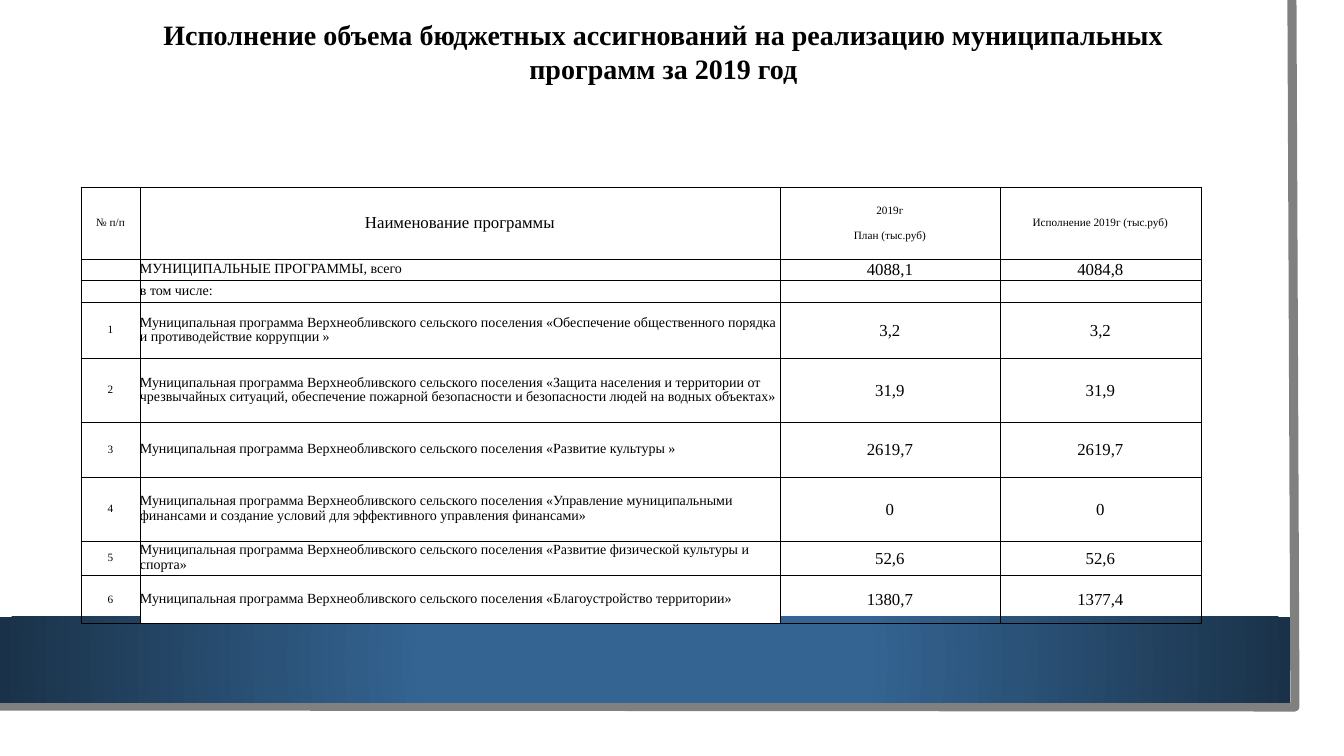
import pptx
import pptx.util
import pptx.dml.color
import pptx.enum.dml
import pptx.enum.shapes
import pptx.enum.text
import pptx.oxml.ns
from lxml import etree

BLACK = pptx.dml.color.RGBColor(0x00, 0x00, 0x00)
WHITE = pptx.dml.color.RGBColor(0xFF, 0xFF, 0xFF)
GREY = pptx.dml.color.RGBColor(0x80, 0x80, 0x80)
BLUE = pptx.dml.color.RGBColor(0x34, 0x64, 0x92)
NAVY = pptx.dml.color.RGBColor(0x1A, 0x32, 0x49)
FONT = "Times New Roman"
LEFT = pptx.enum.text.PP_ALIGN.LEFT
CENTER = pptx.enum.text.PP_ALIGN.CENTER
MIDDLE = pptx.enum.text.MSO_ANCHOR.MIDDLE

TITLE = [
    "Исполнение объема бюджетных ассигнований на реализацию муниципальных",
    "программ за 2019 год",
]
HEADER = ["№ п/п", "Наименование программы", "2019г\nПлан (тыс.руб)", "Исполнение 2019г (тыс.руб)"]
TOTALS = [
    ["", "МУНИЦИПАЛЬНЫЕ ПРОГРАММЫ, всего", "4088,1", "4084,8"],
    ["", "в том числе:", "", ""],
]
PROGRAM_PREFIX = "Муниципальная программа Верхнеобливского сельского поселения "
PROGRAMS = [
    ("«Обеспечение общественного порядка и противодействие коррупции »", "3,2", "3,2"),
    ("«Защита населения и территории от чрезвычайных ситуаций, обеспечение пожарной "
     "безопасности и безопасности людей на водных объектах»", "31,9", "31,9"),
    ("«Развитие культуры »", "2619,7", "2619,7"),
    ("«Управление муниципальными финансами и создание условий для эффективного "
     "управления финансами»", "0", "0"),
    ("«Развитие физической культуры и спорта»", "52,6", "52,6"),
    ("«Благоустройство территории»", "1380,7", "1377,4"),
]
COLUMN_WIDTHS = [59, 640, 220, 201]
ROW_HEIGHTS = [72, 21, 22, 56, 64, 55, 64, 34, 49]
HEADER_SIZES = [8, 12, 8, 8]
BODY_SIZES = [8, 10, 12, 12]
NAME_COLUMN = 1
WHITE_ROWS = (3, 8)
FRAME_POINTS = [(1292, 0), (1295, 707), (-3, 706)]


def px(length):
    return round(length * 914400 / 100.8)


def set_attributes(target, values):
    for name, value in values.items():
        setattr(target, name, value)


def add_element(parent, tag, **attributes):
    return etree.SubElement(parent, pptx.oxml.ns.qn(tag), **attributes)


def write_lines(frame, lines, size, bold=False, align=CENTER, gap=0, spacing=1.0):
    for index, line in enumerate(lines):
        para = frame.add_paragraph() if index else frame.paragraphs[0]
        set_attributes(para, {"alignment": align, "line_spacing": spacing})
        if index and gap:
            para.space_before = pptx.util.Pt(gap)
        if line:
            span = para.add_run()
            span.text = line
            set_attributes(span.font, {"name": FONT, "size": pptx.util.Pt(size), "bold": bold})
            span.font.color.rgb = BLACK
        else:
            add_element(para._p, "a:endParaRPr", sz=str(size * 100))


def add_borders(cell):
    properties = cell._tc.get_or_add_tcPr()
    for side in ("a:lnL", "a:lnR", "a:lnT", "a:lnB"):
        line = add_element(properties, side, w=str(pptx.util.Pt(0.5)))
        add_element(add_element(line, "a:solidFill"), "a:srgbClr", val=str(BLACK))


def add_rectangle(page, left, top, width, height):
    shape = page.shapes.add_shape(
        pptx.enum.shapes.MSO_SHAPE.RECTANGLE, px(left), px(top), px(width), px(height))
    shape.shadow.inherit = False
    shape.line.fill.background()
    return shape


def add_background(page):
    sheet = add_rectangle(page, 0, 0, 1320, 733)
    sheet.fill.solid()
    sheet.fill.fore_color.rgb = WHITE

    start, *rest = [(px(x), px(y)) for x, y in FRAME_POINTS]
    builder = page.shapes.build_freeform(*start)
    builder.add_line_segments(rest, close=False)
    frame_line = builder.convert_to_shape()
    frame_line.shadow.inherit = False
    frame_line.fill.background()
    frame_line.line.color.rgb = GREY
    frame_line.line.width = pptx.util.Pt(6.5)

    band = add_rectangle(page, 0, 617, 1290, 86)
    band.fill.gradient()
    for stop, position, color in zip(band.fill.gradient_stops, (0.34, 1), (BLUE, NAVY)):
        stop.position = position
        stop.color.rgb = color
    gradient = band._element.spPr.find(pptx.oxml.ns.qn("a:gradFill"))
    gradient.remove(gradient.find(pptx.oxml.ns.qn("a:lin")))
    circle = add_element(gradient, "a:path", path="circle")
    add_element(circle, "a:fillToRect", l="50000", t="50000", r="50000", b="50000")


def add_budget_table(page):
    rows = [HEADER, *TOTALS]
    for number, (name, plan, actual) in enumerate(PROGRAMS, 1):
        rows.append([str(number), PROGRAM_PREFIX + name, plan, actual])
    table = page.shapes.add_table(
        len(rows), len(COLUMN_WIDTHS), px(81), px(187),
        px(sum(COLUMN_WIDTHS)), px(sum(ROW_HEIGHTS))).table
    set_attributes(table, {"first_row": False, "horz_banding": False})
    for column, width in zip(table.columns, COLUMN_WIDTHS):
        column.width = px(width)
    for row, height in zip(table.rows, ROW_HEIGHTS):
        row.height = px(height)
    for r, texts in enumerate(rows):
        for c, text in enumerate(texts):
            cell = table.cell(r, c)
            inset = px(1) if r and c > NAME_COLUMN else 0
            set_attributes(cell, {
                "vertical_anchor": MIDDLE, "margin_left": inset, "margin_right": inset,
                "margin_top": inset, "margin_bottom": 0})
            add_borders(cell)
            if c == NAME_COLUMN and r in WHITE_ROWS:
                cell.fill.solid()
                cell.fill.fore_color.rgb = WHITE
            else:
                cell.fill.background()
            is_name = r > 0 and c == NAME_COLUMN
            size = BODY_SIZES[c] if r else HEADER_SIZES[c]
            write_lines(cell.text_frame, text.split("\n"), size if text else 8,
                        align=LEFT if is_name else CENTER, gap=9,
                        spacing=0.93 if is_name else 1.0)


def add_title(page):
    box = page.shapes.add_textbox(px(31), px(12), px(1265), px(78))
    set_attributes(box.text_frame, {"word_wrap": True, "vertical_anchor": MIDDLE})
    write_lines(box.text_frame, TITLE, 20, bold=True)


def main():
    deck = pptx.Presentation()
    set_attributes(deck, {"slide_width": px(1344), "slide_height": px(756)})
    page = deck.slides.add_slide(deck.slide_layouts[6])
    add_background(page)
    add_budget_table(page)
    add_title(page)
    deck.save("out.pptx")


if __name__ == "__main__":
    main()
